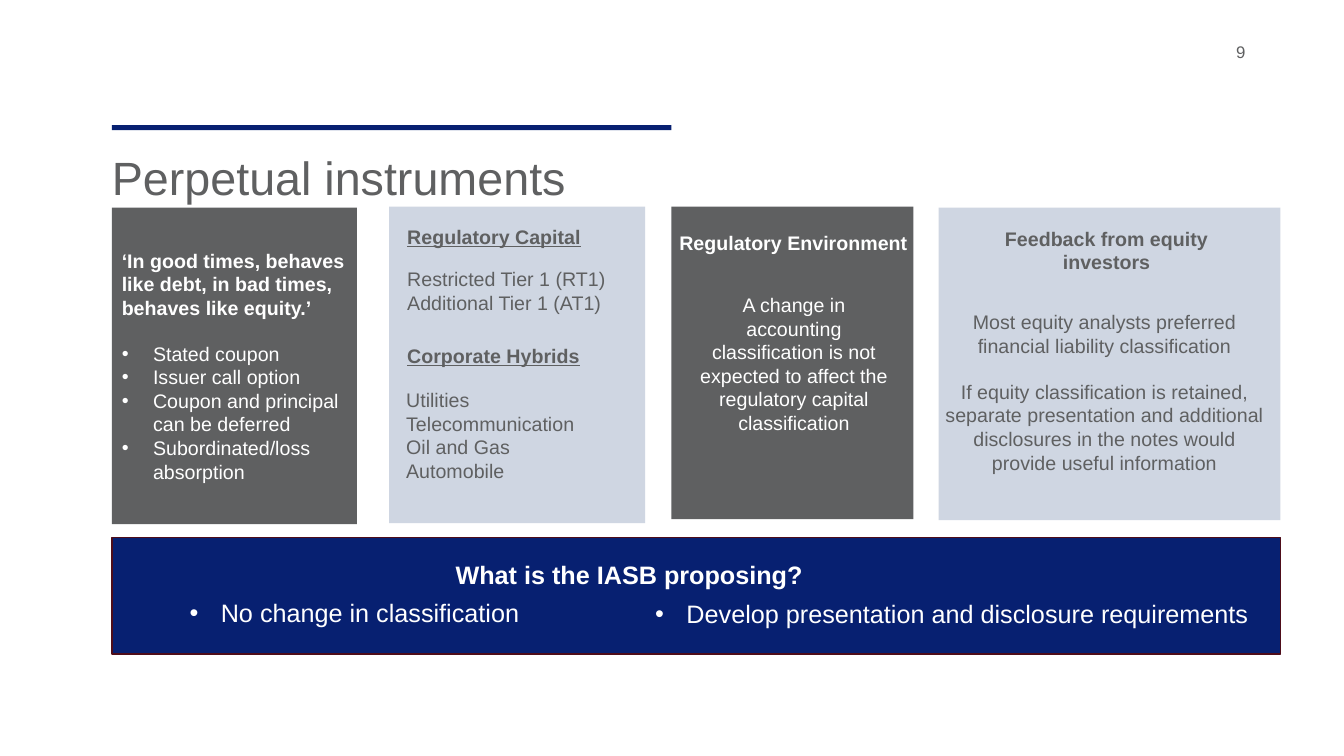
from lxml import etree
from pptx import Presentation
from pptx import util as u
from pptx.dml.color import RGBColor
from pptx.enum import shapes, text
from pptx.oxml.ns import qn

EMU_PER_PX = 9144  # 100 px to the inch
NAVY, BORDER, GREY, PALE, WHITE = "072071", "4E0D1A", "5F6061", "CFD6E2", "FFFFFF"
LEFT, CENTER = text.PP_ALIGN.LEFT, text.PP_ALIGN.CENTER
BLANK_LINE = 16  # points between text groups


def px(length):
    return u.Emu(length * EMU_PER_PX)


def color(hex_value):
    return RGBColor.from_string(hex_value)


class SlideBuilder:
    font_name = "Arial"
    indent = 31

    def __init__(self, presentation):
        self.slide = presentation.slides.add_slide(presentation.slide_layouts[6])

    def panel(self, box, fill, line=None):
        shape = self.slide.shapes.add_shape(shapes.MSO_SHAPE.RECTANGLE, *map(px, box))
        shape.shadow.inherit = False
        shape.fill.solid()
        shape.fill.fore_color.rgb = color(fill)
        if line:
            shape.line.color.rgb = color(line)
            shape.line.width = u.Pt(1)
        else:
            shape.line.fill.background()
        return shape

    def label(self, box, lines, size=14, ink=GREY, align=LEFT, inset=True, **style):
        shape = self.slide.shapes.add_textbox(*map(px, box))
        frame = shape.text_frame
        frame.word_wrap = True
        if not inset:
            frame.margin_left = frame.margin_right = 0
            frame.margin_top = frame.margin_bottom = 0
        for number, line in enumerate(lines):
            self.paragraph(frame, number, line, size, ink, align, **style)

    def paragraph(self, frame, number, line, size, ink, align=LEFT,
                  bold=False, underline=False, bullet=False, before=0):
        """Write one paragraph; the space before applies from the second on."""
        paragraph = frame.add_paragraph() if number else frame.paragraphs[0]
        paragraph.text = line
        paragraph.alignment = align
        if number and before:
            paragraph.space_before = u.Pt(before)
        if bullet:
            properties = paragraph._p.get_or_add_pPr()
            properties.set("marL", str(px(self.indent)))
            properties.set("indent", str(px(-self.indent)))
            etree.SubElement(properties, qn("a:buFont")).set("typeface", self.font_name)
            etree.SubElement(properties, qn("a:buChar")).set("char", "•")
        font = paragraph.font
        font.name = self.font_name
        font.size = u.Pt(size)
        font.color.rgb = color(ink)
        font.bold = bold
        font.underline = underline


def add_heading(builder):
    builder.panel((111, 124, 555, 5), NAVY)
    builder.label((111, 148, 1114, 72), ["Perpetual instruments"], size=33.3, inset=False)
    builder.label((1226, 41, 67, 29), ["9"], size=12, inset=False)


def add_features(builder):
    frame = builder.panel((111, 206, 243, 314), GREY).text_frame
    frame.word_wrap = True
    frame.vertical_anchor = text.MSO_ANCHOR.MIDDLE
    quote = "‘In good times, behaves like debt, in bad times, behaves like equity.’"
    builder.paragraph(frame, 0, quote, 14, WHITE, bold=True)
    features = ["Stated coupon", "Issuer call option",
                "Coupon and principal can be deferred", "Subordinated/loss absorption"]
    for number, feature in enumerate(features, 1):
        builder.paragraph(frame, number, feature, 14, WHITE, bullet=True,
                          before=BLANK_LINE if number == 1 else 0)


def add_issuers(builder):
    builder.panel((386, 205, 254, 314), PALE)
    for top, title in ((218, "Regulatory Capital"), (336, "Corporate Hybrids")):
        builder.label((394, top, 192, 34), [title], bold=True, underline=True)
    builder.label((394, 260, 221, 81), ["Restricted Tier 1 (RT1)", "Additional Tier 1 (AT1)"])
    builder.label((393, 380, 189, 104),
                  ["Utilities", "Telecommunication", "Oil and Gas", "Automobile"])


def add_regulation(builder):
    builder.panel((666, 205, 240, 310), GREY)
    builder.label((660, 224, 254, 34), ["Regulatory Environment"],
                  ink=WHITE, align=CENTER, bold=True)
    builder.label((678, 286, 219, 151),
                  ["A change in accounting classification is not expected to affect "
                   "the regulatory capital classification"], ink=WHITE, align=CENTER)


def add_feedback(builder):
    builder.panel((931, 206, 339, 310), PALE)
    builder.label((955, 220, 285, 57), ["Feedback from equity investors"],
                  align=CENTER, bold=True)
    builder.label((921, 303, 349, 175),
                  ["Most equity analysts preferred financial liability classification",
                   "If equity classification is retained, separate presentation and additional "
                   "disclosures in the notes would provide useful information"],
                  align=CENTER, before=BLANK_LINE)


def add_proposal(builder):
    builder.panel((111, 533, 1159, 116), NAVY, line=BORDER)
    builder.label((442, 550, 609, 40), ["What is the IASB proposing?"],
                  size=18, ink=WHITE, bold=True)
    for box, proposal in (
        ((122, 588, 459, 40), "No change in classification"),
        ((627, 589, 634, 40), "Develop presentation and disclosure requirements"),
    ):
        builder.label(box, [proposal], size=18, ink=WHITE, align=CENTER, bullet=True)


def main():
    presentation = Presentation()
    presentation.slide_width, presentation.slide_height = px(1333), px(750)
    builder = SlideBuilder(presentation)
    for add_part in (add_heading, add_features, add_issuers,
                     add_regulation, add_feedback, add_proposal):
        add_part(builder)
    presentation.save("out.pptx")


if __name__ == "__main__":
    main()
